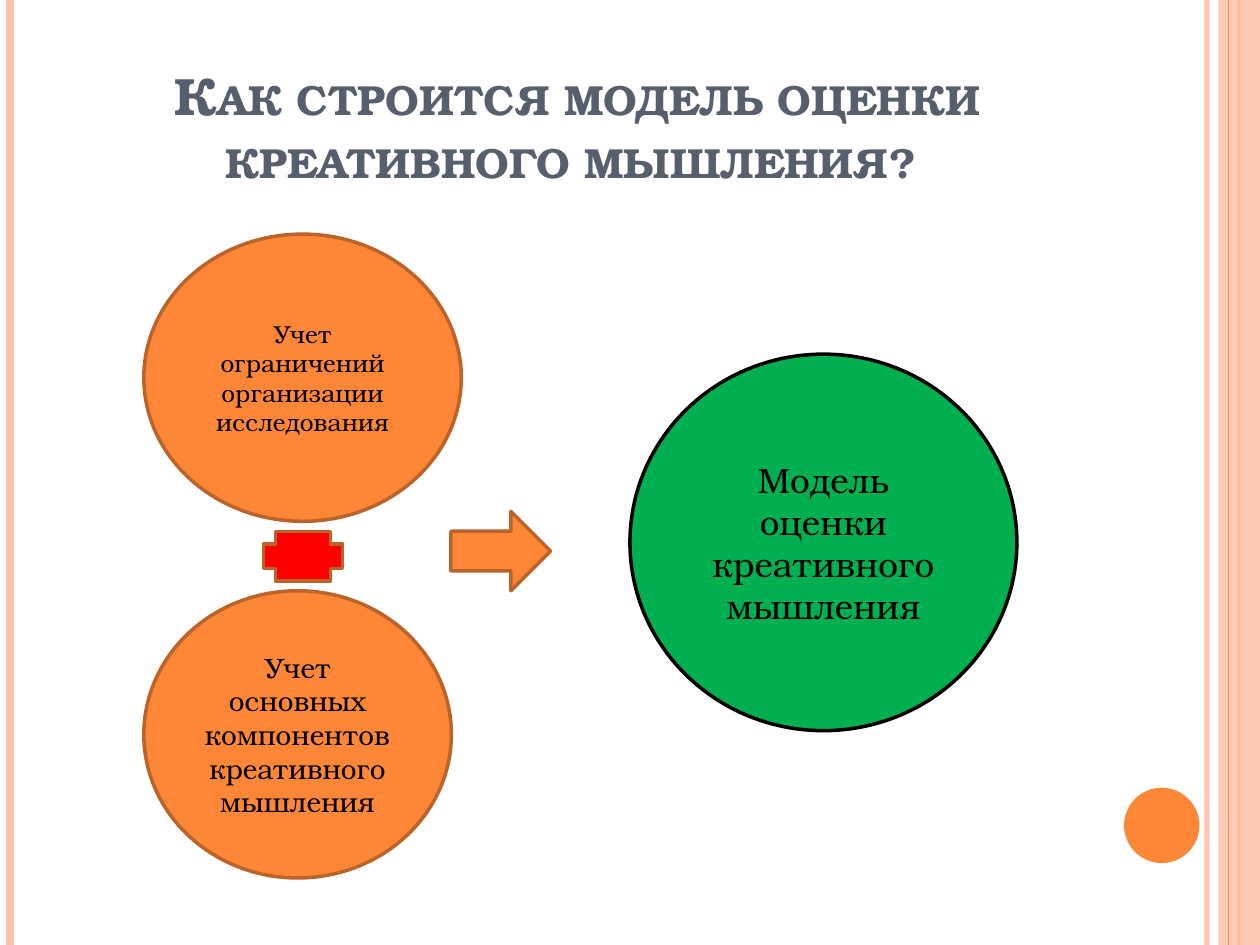
import pptx
import pptx.dml.color
import pptx.enum.shapes
import pptx.enum.text
import pptx.oxml.ns
import pptx.util
from lxml import etree
from pptx.util import Cm, Pt

FONT = "TeX Gyre Bonum"
SLIDE_WIDTH, SLIDE_HEIGHT = 25.4, 19.05
COLORS = {
    "orange": "FE8637",
    "peach": "FEC3AE",
    "outline": "BC6329",
    "title": "575F6D",
    "model": "00B050",
    "plus": "FF0000",
    "black": "000000",
}
SHAPES = pptx.enum.shapes.MSO_SHAPE
TEXT = pptx.enum.text


def rgb(color):
    return pptx.dml.color.RGBColor.from_string(COLORS[color])


def set_opacity(properties, percent):
    color = next(properties.iter(pptx.oxml.ns.qn("a:srgbClr")))
    alpha = etree.SubElement(color, pptx.oxml.ns.qn("a:alpha"))
    alpha.set("val", str(percent * 1000))


def add_stripe(slide, x, color, width, opacity=100):
    stripe = slide.shapes.add_connector(
        pptx.enum.shapes.MSO_CONNECTOR.STRAIGHT, Cm(x), Cm(0), Cm(x), Cm(SLIDE_HEIGHT)
    )
    stripe.line.color.rgb = rgb(color)
    stripe.line.width = Pt(width)
    properties = stripe._element.spPr
    if opacity < 100:
        set_opacity(properties, opacity)
    etree.SubElement(properties, pptx.oxml.ns.qn("a:effectLst"))


def add_figure(slide, kind, box, fill, outline=None):
    figure = slide.shapes.add_shape(kind, *map(Cm, box))
    figure.shadow.inherit = False
    figure.fill.solid()
    figure.fill.fore_color.rgb = rgb(fill)
    if outline:
        figure.line.color.rgb = rgb(outline)
        figure.line.width = Pt(2)
    else:
        figure.line.fill.background()
    return figure


def write(frame, words, size, color, anchor):
    frame.word_wrap = True
    frame.auto_size = TEXT.MSO_AUTO_SIZE.NONE
    frame.vertical_anchor = anchor
    paragraph = frame.paragraphs[0]
    paragraph.alignment = TEXT.PP_ALIGN.CENTER
    run = paragraph.add_run()
    run.text = words
    run.font.name = FONT
    run.font.size = Pt(size)
    run.font.color.rgb = rgb(color)
    return run


def add_circle(slide, box, words, size, fill, outline):
    circle = add_figure(slide, SHAPES.OVAL, box, fill, outline)
    write(circle.text_frame, words, size, "black", TEXT.MSO_ANCHOR.MIDDLE)


def add_title(slide, words):
    title = slide.shapes.title
    title.left, title.top, title.width, title.height = map(Cm, (1.27, 0.76, 20.75, 3.18))
    heading = write(title.text_frame, words, 30, "title", TEXT.MSO_ANCHOR.BOTTOM)
    heading.font.bold = True
    heading.font._element.set("cap", "small")


def add_decoration(slide):
    add_stripe(slide, 24.33, "peach", 3, opacity=93)
    add_stripe(slide, 0.2, "peach", 4.5)
    add_stripe(slide, 24.97, "orange", 1.5)
    band = add_figure(slide, SHAPES.RECTANGLE, (24.56, 0, 0.84, SLIDE_HEIGHT), "peach")
    set_opacity(band._element.spPr, 87)
    add_stripe(slide, 24.77, "orange", 0.75)
    add_figure(slide, SHAPES.OVAL, (22.66, 15.88, 1.52, 1.52), "orange")


def main():
    deck = pptx.Presentation()
    deck.slide_width, deck.slide_height = Cm(SLIDE_WIDTH), Cm(SLIDE_HEIGHT)
    slide = deck.slides.add_slide(deck.slide_layouts[5])
    add_decoration(slide)
    add_title(slide, "Как строится модель оценки креативного мышления? ")
    add_circle(slide, (2.9, 4.72, 6.4, 5.79),
               "Учет ограничений организации исследования", 14, "orange", "outline")
    add_circle(slide, (2.9, 11.91, 6.2, 5.79),
               "Учет основных компонентов креативного мышления", 16, "orange", "outline")
    add_circle(slide, (12.7, 7.14, 7.8, 7.59),
               "Модель оценки креативного мышления", 20, "model", "black")
    add_figure(slide, SHAPES.CROSS, (5.31, 10.72, 1.6, 0.99), "plus", "outline")
    add_figure(slide, SHAPES.RIGHT_ARROW, (9.09, 10.31, 2.01, 1.6), "orange", "outline")
    deck.save("out.pptx")


if __name__ == "__main__":
    main()
